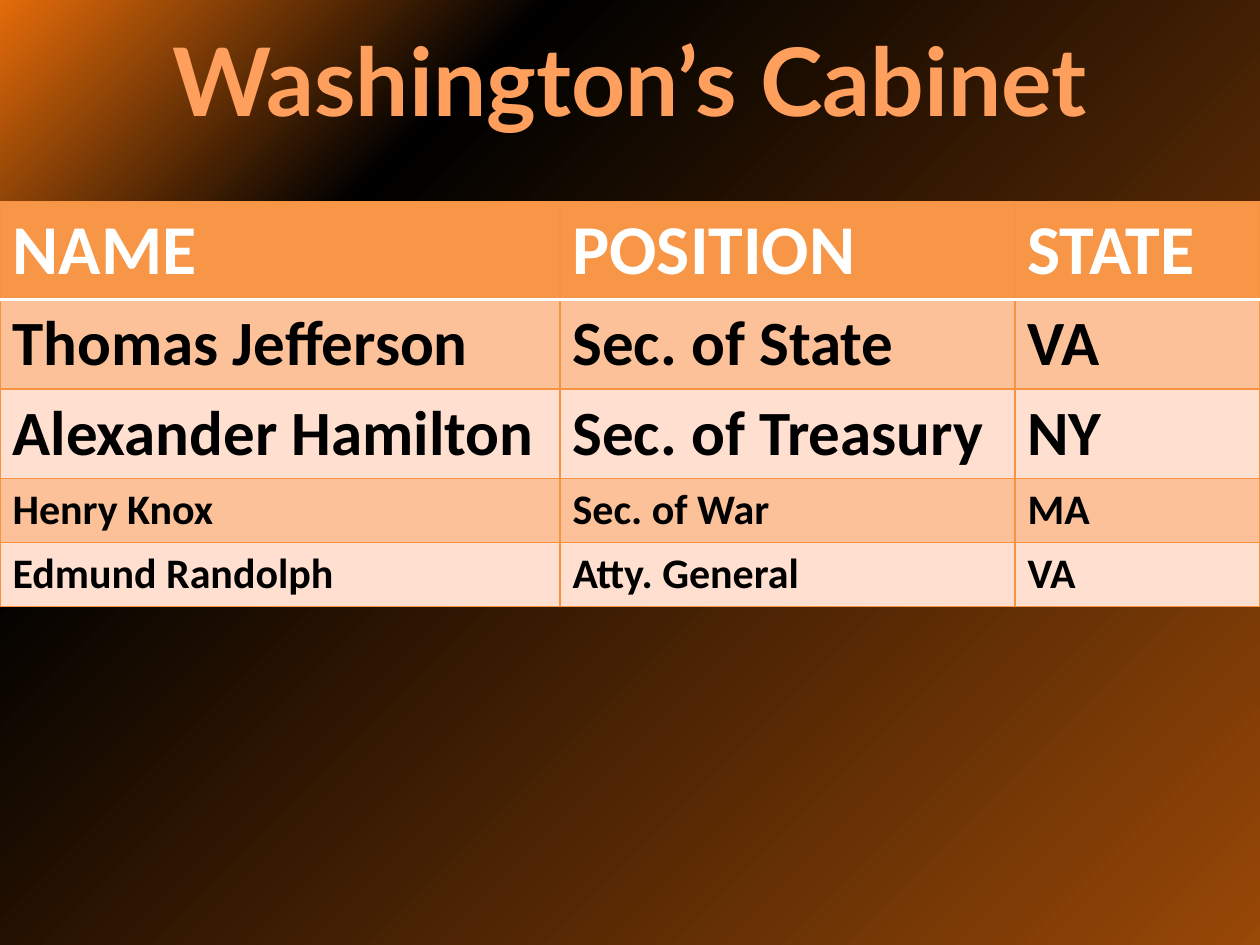
from dataclasses import dataclass

from pptx import Presentation
from pptx.dml.color import RGBColor
from pptx.enum import text
from pptx.oxml import parse_xml
from pptx.oxml.ns import nsdecls
from pptx.util import Pt

TITLE = "Washington’s Cabinet"
ROWS = [
    ("NAME", "POSITION", "STATE"),
    ("Thomas Jefferson", "Sec. of State", "VA"),
    ("Alexander Hamilton", "Sec. of Treasury", "NY"),
    ("Henry Knox", "Sec. of War", "MA"),
    ("Edmund Randolph", "Atty. General", "VA"),
]
COLUMN_WIDTHS = (320, 260, 140)
ROW_HEIGHTS = (56, 51, 51, 36.5, 36.5)


@dataclass(frozen=True)
class Theme:
    title_font: str = "Lato"
    body_font: str = "Calibri"
    title_size: int = 54
    row_sizes: tuple = (40, 36, 36, 24, 24)
    title: str = "FF9F5D"
    header: str = "F79646"
    bands: tuple = ("FCC199", "FFDFD0")
    header_text: str = "FFFFFF"
    body_text: str = "000000"
    grid: tuple = ("F69240", 0.75)
    header_rule: tuple = ("FFFFFF", 2)
    glow: tuple = ((0, "984807"), (75, "000000"), (100, "E46C0A"))


THEME = Theme()


def set_background(page):
    """Radial gradient that spreads from the bottom right corner."""
    stops = "".join(
        f'<a:gs pos="{place * 1000}"><a:srgbClr val="{color}"/></a:gs>'
        for place, color in THEME.glow)
    page.element.cSld.insert(0, parse_xml(
        f'<p:bg {nsdecls("p", "a")}><p:bgPr><a:gradFill rotWithShape="1">'
        f'<a:gsLst>{stops}</a:gsLst><a:path path="circle">'
        '<a:fillToRect l="100000" t="100000"/></a:path></a:gradFill>'
        '<a:effectLst/></p:bgPr></p:bg>'))


def set_font(para, name, size, color):
    para.font.name = name
    para.font.size = Pt(size)
    para.font.bold = True
    para.font.color.rgb = RGBColor.from_string(color)


def set_borders(cell, **sides):
    """Sides are given in the order L, R, T, B, each as (color, width)."""
    properties = cell._tc.get_or_add_tcPr()
    for index, (side, (color, width)) in enumerate(sides.items()):
        properties.insert(index, parse_xml(
            f'<a:ln{side} {nsdecls("a")} w="{Pt(width)}"><a:solidFill>'
            f'<a:srgbClr val="{color}"/></a:solidFill></a:ln{side}>'))


def add_title(page):
    title = page.shapes.title
    title.left, title.top, title.width, title.height = Pt(0), Pt(0), Pt(720), Pt(90)
    frame = title.text_frame
    frame.text = TITLE
    frame.auto_size = text.MSO_AUTO_SIZE.NONE
    frame.vertical_anchor = text.MSO_ANCHOR.MIDDLE
    para = frame.paragraphs[0]
    para.alignment = text.PP_ALIGN.CENTER
    set_font(para, THEME.title_font, THEME.title_size, THEME.title)


def add_cabinet_table(page):
    table = page.shapes.add_table(
        len(ROWS), len(COLUMN_WIDTHS), Pt(0), Pt(115),
        Pt(sum(COLUMN_WIDTHS)), Pt(sum(ROW_HEIGHTS))).table
    table.first_row = table.horz_banding = False
    for column, width in zip(table.columns, COLUMN_WIDTHS):
        column.width = Pt(width)
    for r, (row, height) in enumerate(zip(table.rows, ROW_HEIGHTS)):
        row.height = Pt(height)
        fill = THEME.bands[(r - 1) % 2] if r else THEME.header
        color = THEME.body_text if r else THEME.header_text
        top = THEME.header_rule if r == 1 else THEME.grid
        bottom = THEME.header_rule if r == 0 else THEME.grid
        for cell, words in zip(row.cells, ROWS[r]):
            cell.text = words
            set_font(cell.text_frame.paragraphs[0], THEME.body_font,
                     THEME.row_sizes[r], color)
            cell.fill.solid()
            cell.fill.fore_color.rgb = RGBColor.from_string(fill)
            set_borders(cell, L=THEME.grid, R=THEME.grid, T=top, B=bottom)


def main():
    deck = Presentation()
    deck.slide_width, deck.slide_height = Pt(720), Pt(540)
    page = deck.slides.add_slide(deck.slide_layouts.get_by_name("Title Only"))
    set_background(page)
    add_title(page)
    add_cabinet_table(page)
    deck.save("out.pptx")


if __name__ == "__main__":
    main()
